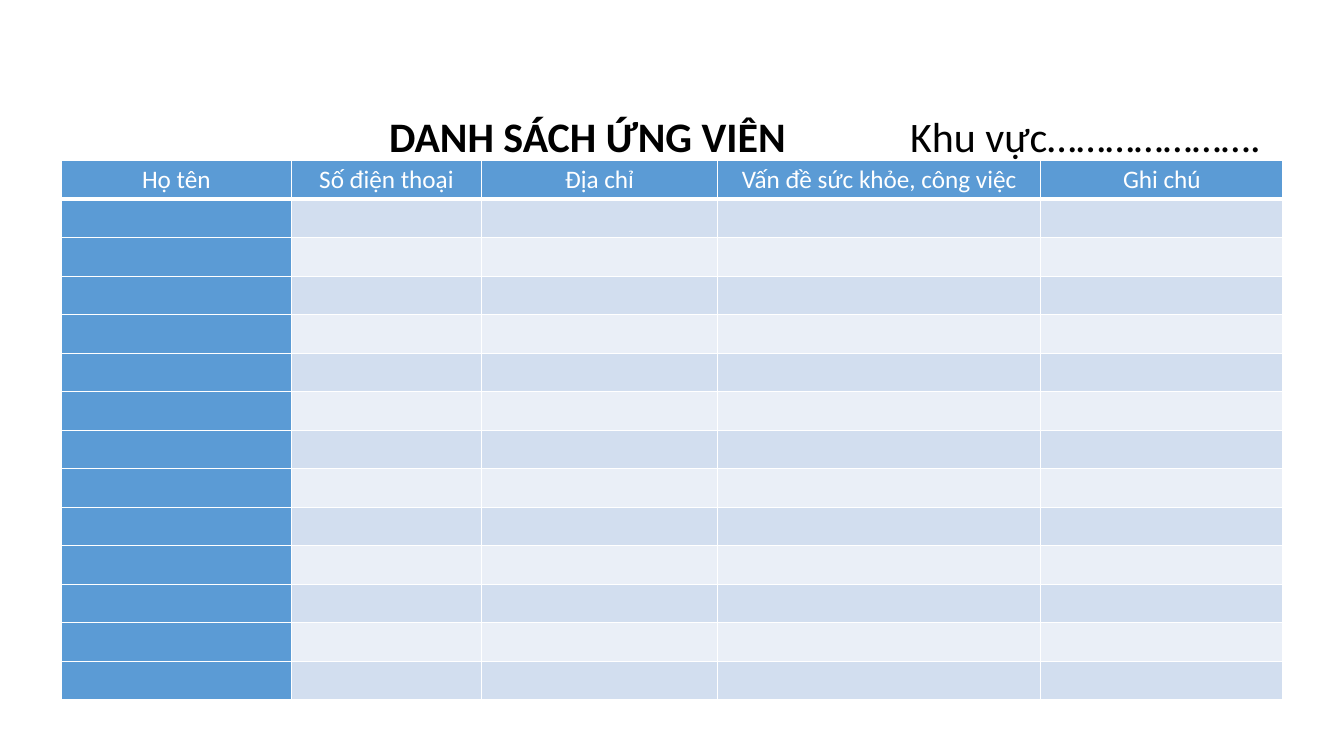
from lxml.etree import SubElement
from pptx import Presentation
from pptx.dml.color import RGBColor
from pptx.enum.text import MSO_ANCHOR as Anchor, MSO_AUTO_SIZE as AutoSize, PP_ALIGN as Align
from pptx.oxml.ns import qn
from pptx.util import Cm, Pt

BLUE, BAND_DARK, BAND_LIGHT, WHITE, BLACK = "5B9BD5", "D2DEEF", "EAEFF7", "FFFFFF", "000000"


def paint(target, color):
    """Give a fill or a font a solid colour."""
    if hasattr(target, "solid"):
        target.solid()
        target.fore_color.rgb = RGBColor.from_string(color)
    else:
        target.color.rgb = RGBColor.from_string(color)


def add_border(cell, side, points):
    line = SubElement(cell._tc.get_or_add_tcPr(), qn(f"a:ln{side}"), w=str(Pt(points)))
    SubElement(SubElement(line, qn("a:solidFill")), qn("a:srgbClr"), val=WHITE)


prs = Presentation()
prs.slide_width, prs.slide_height = Cm(33.87), Cm(19.05)
slide = prs.slides.add_slide(prs.slide_layouts[5])

# Heading with the area to fill in, set off by a tab stop
title = slide.shapes.title
title.left, title.top, title.width, title.height = Cm(9.55), Cm(2.67), Cm(22.76), Cm(1.55)
title_frame = title.text_frame
title_frame.auto_size = AutoSize.NONE
title_frame.vertical_anchor = Anchor.TOP
heading = title_frame.paragraphs[0]
heading.alignment = Align.LEFT
tab_stops = SubElement(heading._p.get_or_add_pPr(), qn("a:tabLst"))
SubElement(tab_stops, qn("a:tab"), pos=str(Cm(13.13)), algn="l")
for text, bold in [("DANH SÁCH ỨNG VIÊN\t", True), ("Khu vực………………….", False)]:
    run = heading.add_run()
    run.text = text
    run.font.bold = bold
heading.font.name = "Calibri"
heading.font.size = Pt(30)
paint(heading.font, BLACK)

# Candidate table: header row, then empty banded rows
columns = [
    ("Họ tên", 5.79),
    ("Số điện thoại", 4.8),
    ("Địa chỉ", 5.94),
    ("Vấn đề sức khỏe, công việc", 8.15),
    ("Ghi chú", 6.1),
]
ROWS, ROW_HEIGHT = 14, 0.97
table_width = sum(width for _, width in columns)
candidates = slide.shapes.add_table(
    ROWS, len(columns), Cm(1.55), Cm(4.05), Cm(table_width), Cm(ROWS * ROW_HEIGHT)
).table
candidates.first_col = True

for row in candidates.rows:
    row.height = Cm(ROW_HEIGHT)

for col, (label, width) in enumerate(columns):
    candidates.columns[col].width = Cm(width)
    for row in range(ROWS):
        cell = candidates.cell(row, col)
        cell.margin_left = cell.margin_right = Cm(0.1)
        cell.margin_top = cell.margin_bottom = 0
        cell.vertical_anchor = Anchor.MIDDLE
        for side in "LRTB":
            add_border(cell, side, 3 if row == 0 and side == "B" else 1)
        if row == 0 or col == 0:
            paint(cell.fill, BLUE)
        else:
            paint(cell.fill, BAND_DARK if row % 2 else BAND_LIGHT)
        entry = cell.text_frame.paragraphs[0]
        if row == 0:
            entry.text = label
            entry.alignment = Align.CENTER
        entry.font.name = "Calibri"
        entry.font.size = Pt(18)
        entry.font.bold = False
        paint(entry.font, WHITE if row == 0 or col == 0 else BLACK)

prs.save("out.pptx")
